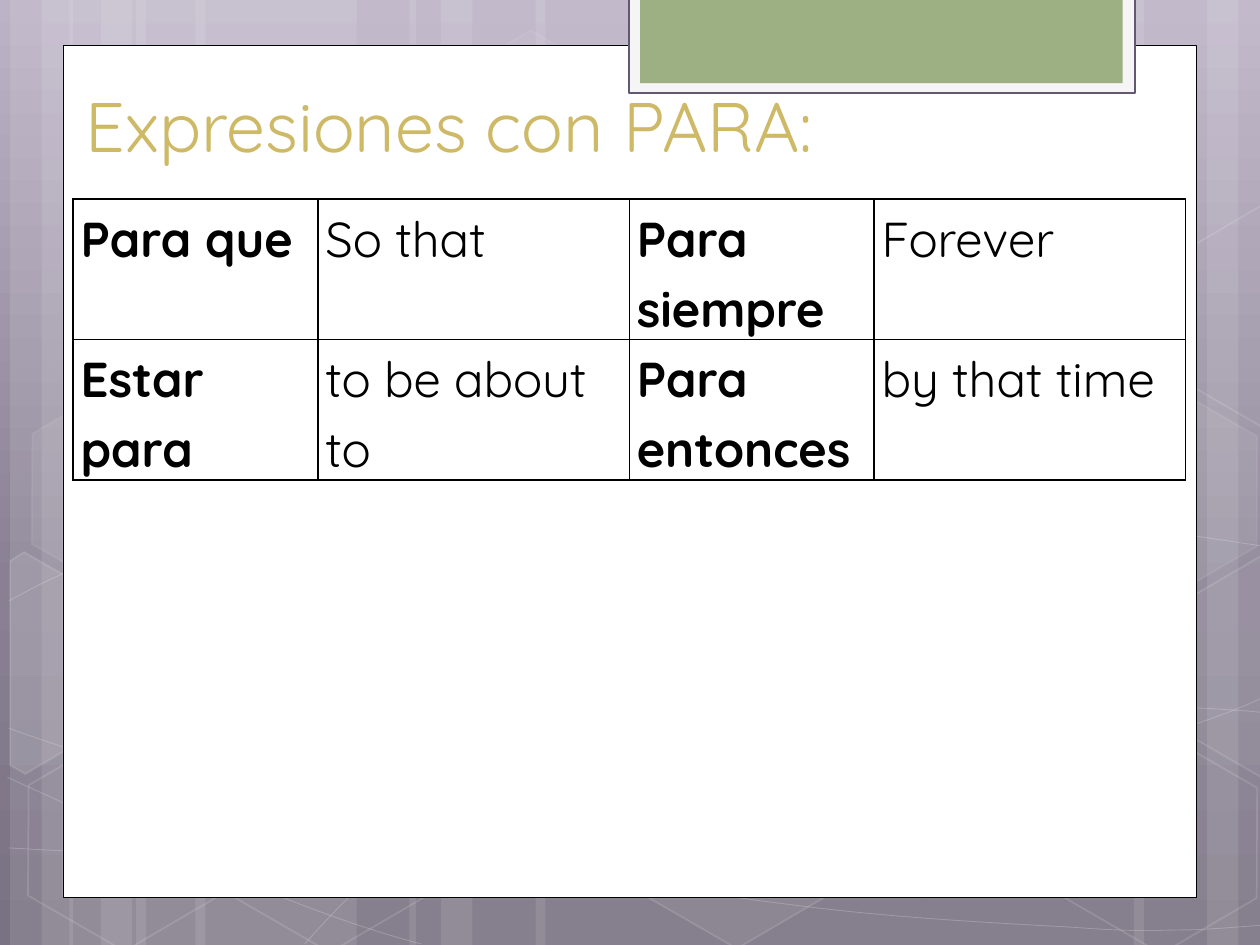
import copy
import math

from lxml import etree
from pptx import Presentation
from pptx.dml.color import RGBColor
from pptx.enum import shapes, text
from pptx.oxml.ns import qn
from pptx.util import Inches, Pt

FONT = "Quicksand"
WHITE, BLACK = "FFFFFF", "000000"
RECT, HEXAGON = shapes.MSO_SHAPE.RECTANGLE, shapes.MSO_SHAPE.HEXAGON
TILT = 30

# left, width
STRIPES = [(1.08, 1.75), (0.08, 0.5), (0.33, 0.83), (1.55, 1.75), (0.55, 0.5), (0.8, 0.83),
           (7.33, 1.75), (9.58, 0.5), (9, 0.83), (4.25, 3.08), (3.25, 0.5), (3.5, 0.83)]
# start point, then two control points and an end point for each Bezier segment
CURVES = [
    [(0.07, 6.73), (0.61, 6.76), (1.15, 6.79), (1.9, 6.78), (2.65, 6.77), (3.58, 6.75), (4.58, 6.65),
     (5.58, 6.55), (7, 6.36), (7.92, 6.17), (8.83, 5.98), (9.77, 5.68), (10.07, 5.51)],
    [(0.07, 4.77), (0.36, 4.61), (0.65, 4.46), (1.21, 4.31), (1.78, 4.16), (2.59, 3.94), (3.47, 3.87),
     (4.36, 3.8), (5.44, 3.79), (6.54, 3.87), (7.64, 3.95), (9.47, 4.26), (10.07, 4.34)],
    [(0.06, 6.17), (1.27, 6.72), (2.47, 7.27), (3.34, 7.49)],
    [(0.07, 5.78), (0.38, 5.89), (0.7, 6), (1.28, 6.16), (1.86, 6.31), (2.73, 6.56), (3.57, 6.73),
     (4.4, 6.9), (5.45, 7.08), (6.28, 7.18), (7.11, 7.29), (8, 7.33), (8.53, 7.36),
     (9.05, 7.4), (9.19, 7.38), (9.45, 7.38), (9.71, 7.37), (9.89, 7.35), (10.07, 7.34)],
    [(2.42, 7.49), (2.6, 7.29), (2.78, 7.09), (3.02, 6.91), (3.26, 6.73), (3.6, 6.53), (3.88, 6.39),
     (4.16, 6.25), (4.33, 6.19), (4.7, 6.09), (5.06, 5.99), (5.73, 5.85), (6.08, 5.78),
     (6.44, 5.71), (6.49, 5.71), (6.8, 5.69), (7.11, 5.66), (7.6, 5.63), (7.94, 5.62),
     (8.29, 5.61), (8.86, 5.62), (8.86, 5.62), (9.08, 5.62), (9.31, 5.62), (9.53, 5.62),
     (9.71, 5.63), (9.88, 5.64), (9.97, 5.65), (10.06, 5.66), (10.03, 5.65), (10.06, 5.66)],
]
# left, top, fill opacity, line opacity
HEXAGONS = [(3.34, 0.36, 4, 8), (4.97, 5.89, 6, 12), (0.11, 5.91, 0, 12), (0.14, 3.12, 7, 8),
            (1.74, 5.92, 0, 12), (7.53, 4.53, 10, 12), (8.34, 5.93, 0, 12), (8.34, 3.14, 7, 8)]
# centre of rotation, corners as they appear once tilted, fill opacity
CUT_HEXAGONS = [
    ((0.36, 5.35), [(0.08, 4.45), (0.19, 4.38), (0.96, 4.82), (0.95, 5.7), (0.2, 6.14), (0.08, 6.07)], 10),
    ((9.85, 5.2), [(9.26, 4.85), (10.01, 4.41), (10.09, 4.46), (10.09, 6.13), (10.02, 6.17), (9.26, 5.73)], 4),
    ((9.85, 2.41), [(9.26, 2.07), (10.01, 1.63), (10.1, 1.68), (10.09, 3.35), (10.02, 3.39), (9.26, 2.95)], 0),
]
PHRASES = [["Para que", "So that", "Para siempre", "Forever"],
           ["Estar para", "to be about to", "Para entonces", "by that time"]]


def rgb(value):
    return RGBColor.from_string(value)


def paint(fill, color, opacity=100):
    """Solid fill with an opacity in percent; zero means no fill."""
    if not opacity:
        fill.background()
        return
    fill.solid()
    fill.fore_color.rgb = rgb(color)
    if opacity < 100:
        clr = fill._xPr.find(".//" + qn("a:srgbClr"))
        etree.SubElement(clr, qn("a:alpha"), val=str(opacity * 1000))


def style(sp, color=WHITE, opacity=100, line=None, width=1, line_opacity=100):
    sp.shadow.inherit = False
    paint(sp.fill, color, opacity)
    if line:
        sp.line.width = Pt(width)
        paint(sp.line.fill, line, line_opacity)
    else:
        sp.line.fill.background()
    return sp


def add_shape(s, kind, x, y, w, h, **look):
    return style(s.shapes.add_shape(kind, Inches(x), Inches(y), Inches(w), Inches(h)), **look)


def add_outline(s, x, y, points, close, **look):
    points = [(Inches(x + px), Inches(y + py)) for px, py in points]
    builder = s.shapes.build_freeform(*points[0])
    builder.add_line_segments(points[1:], close=close)
    return style(builder.convert_to_shape(), **look)


def bend(sp):
    """Turn every three line segments of an outline into one cubic Bezier."""
    outline = sp._element.find(".//" + qn("a:path"))
    lines = outline.findall(qn("a:lnTo"))
    for i in range(0, len(lines), 3):
        curve = etree.SubElement(outline, qn("a:cubicBezTo"))
        for line in lines[i:i + 3]:
            curve.append(line[0])
            outline.remove(line)


def untilt(points, center):
    cos, sin = math.cos(math.radians(TILT)), math.sin(math.radians(TILT))
    cx, cy = center
    return [(cx + (px - cx) * cos + (py - cy) * sin, cy - (px - cx) * sin + (py - cy) * cos)
            for px, py in points]


def add_gradient(s, stops):
    fill = s.background.fill
    fill.gradient()
    fill.gradient_angle = 270
    stop_list = s._element.find(".//" + qn("a:gsLst"))
    stop_list.append(copy.deepcopy(stop_list[-1]))
    for stop, (position, color) in zip(fill.gradient_stops, stops):
        stop.position = position
        stop.color.rgb = rgb(color)


def add_backdrop(s, x, y, h):
    add_gradient(s, [(0, "BCB3C6"), (0.62, "898193"), (1, "797282")])
    for left, width in STRIPES:
        add_shape(s, RECT, x + left, y, width, h, opacity=10)
    for nodes in CURVES:
        bend(add_outline(s, x, y, nodes, False, opacity=0, line=WHITE, width=0.5, line_opacity=20))
    for left, top, opacity, line_opacity in HEXAGONS:
        sp = add_shape(s, HEXAGON, x + left, y + top, 1.75, 1.52, opacity=opacity,
                       line=WHITE, line_opacity=line_opacity)
        sp.rotation = TILT
        sp.adjustments[0], sp.adjustments[1] = 0.285, 1.155
    for center, corners, opacity in CUT_HEXAGONS:
        sp = add_outline(s, x, y, untilt(corners, center), True, opacity=opacity,
                         line=WHITE, line_opacity=12)
        sp.rotation = TILT


def add_panel(s, x, y, w, h):
    add_shape(s, RECT, x, y, w, h, line=BLACK, width=0.5)
    tab_x, tab_y = x + 4.49, y - 0.38
    add_shape(s, RECT, tab_x, tab_y, 4.02, 0.76, color="F5F5F5", line="645773", width=1.25)
    add_shape(s, RECT, tab_x + 0.09, tab_y, 3.83, 0.68, color="9CB084")


def set_text(tf, value, size, color, bold=False):
    tf.word_wrap = True
    p = tf.paragraphs[0]
    p.text = value
    font = p.runs[0].font
    font.name, font.size, font.bold = FONT, Pt(size), bold
    font.color.rgb = rgb(color)
    return p


def add_title(s, x, y, w, h):
    tf = s.shapes.add_textbox(Inches(x), Inches(y), Inches(w), Inches(h)).text_frame
    set_text(tf, "Expresiones con PARA:", 40, "CEB966")
    tf.vertical_anchor = text.MSO_ANCHOR.BOTTOM


def add_borders(cell, color, width):
    tcPr = cell._tc.get_or_add_tcPr()
    for i, side in enumerate(("a:lnL", "a:lnR", "a:lnT", "a:lnB")):
        ln = etree.Element(qn(side), w=str(Pt(width)))
        etree.SubElement(etree.SubElement(ln, qn("a:solidFill")), qn("a:srgbClr"), val=color)
        tcPr.insert(i, ln)


def add_phrase_table(s, x, y, w, h):
    rows, cols = len(PHRASES), len(PHRASES[0])
    table = s.shapes.add_table(rows, cols, Inches(x), Inches(y), Inches(w), Inches(h)).table
    table.first_row = table.horz_banding = False
    for c, col in enumerate(table.columns):
        col.width = Inches(w * (0.28 if c % 2 else 0.22))
    for row, phrases in zip(table.rows, PHRASES):
        row.height = Inches(h / rows)
        for c, (cell, phrase) in enumerate(zip(row.cells, phrases)):
            cell.fill.background()
            cell.margin_left = cell.margin_right = Inches(0.06)
            cell.margin_top = cell.margin_bottom = 0
            p = set_text(cell.text_frame, phrase, 28, BLACK, bold=c % 2 == 0)
            p.line_spacing, p.space_after = 1.15, Pt(10)
            add_borders(cell, BLACK, 1)


def main():
    prs = Presentation()
    prs.slide_width, prs.slide_height = Inches(10), Inches(7.5)
    s = prs.slides.add_slide(prs.slide_layouts[6])
    add_backdrop(s, 0, 0, 7.5)
    add_panel(s, 0.5, 0.36, 9, 6.76)
    add_title(s, 0.58, 0.58, 7.68, 0.79)
    add_phrase_table(s, 0.58, 1.58, 8.83, 2.23)
    prs.save("out.pptx")


if __name__ == "__main__":
    main()
